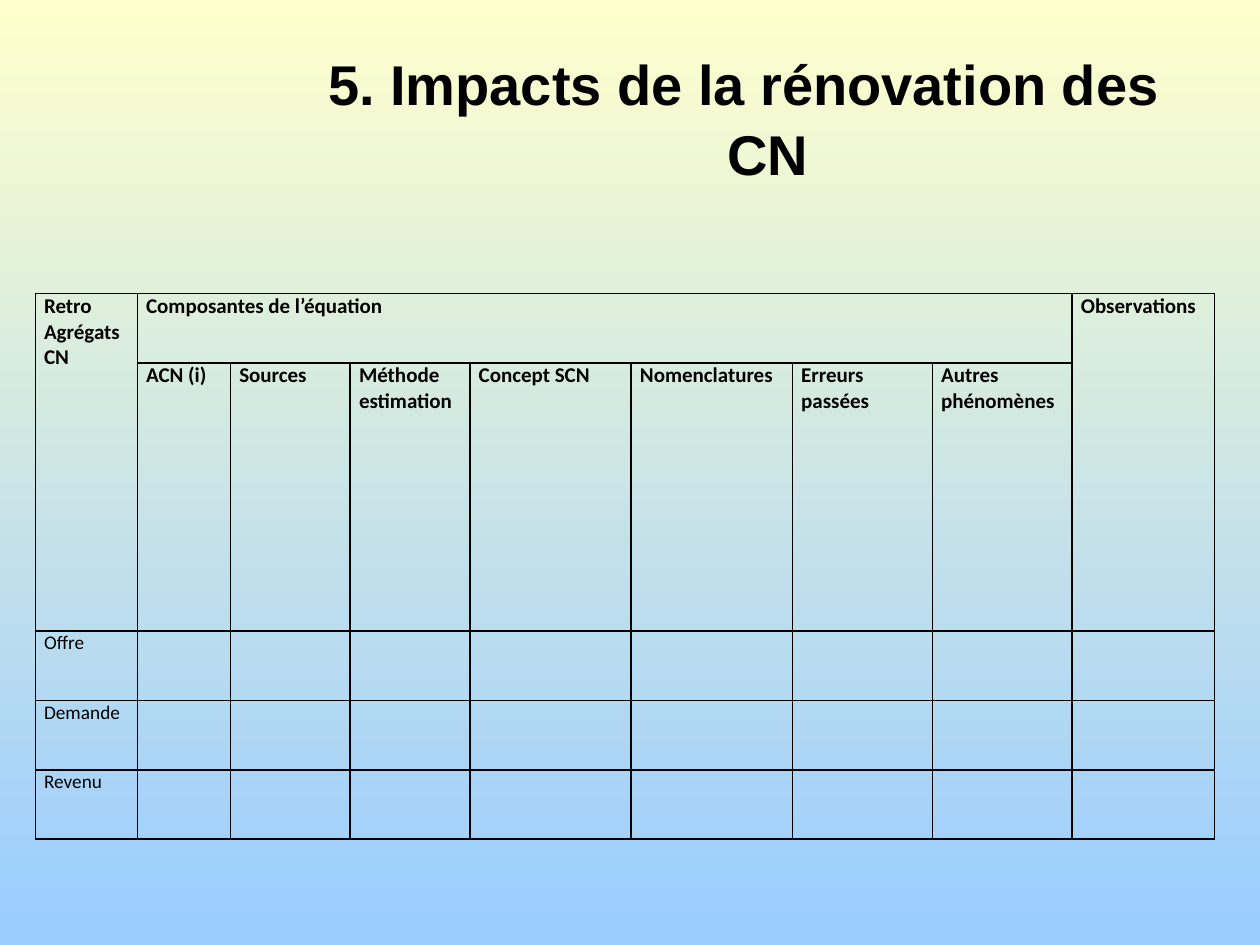
from lxml import etree
from pptx import Presentation
from pptx.dml.color import RGBColor
from pptx.enum.text import MSO_ANCHOR, MSO_AUTO_SIZE, PP_ALIGN
from pptx.oxml.ns import qn
from pptx.util import Inches, Pt

CENTER = PP_ALIGN.CENTER
JUSTIFY = PP_ALIGN.JUSTIFY
TOP = MSO_ANCHOR.TOP
NO_AUTOFIT = MSO_AUTO_SIZE.NONE

COLORS = {"text": "000000", "border": "000000", "sky_top": "FFFFCC", "sky_bottom": "99CCFF"}
COLUMN_WIDTHS = [0.81, 0.74, 0.95, 0.95, 1.28, 1.28, 1.11, 1.11, 1.13]
ROW_HEIGHTS = [0.55, 2.13, 0.55, 0.55, 0.55]
COMPONENTS = [
    "ACN (i)", "Sources", "Méthode estimation", "Concept SCN",
    "Nomenclatures", "Erreurs passées", "Autres phénomènes",
]
AGGREGATES = ["Offre", "Demande", "Revenu"]


def rgb(name):
    return RGBColor.from_string(COLORS[name])


def paint_background(slide):
    fill = slide.background.fill
    fill.gradient()
    fill.gradient_angle = 270
    for stop, position, name in zip(fill.gradient_stops, (0, 1), ("sky_top", "sky_bottom")):
        stop.position = position
        stop.color.rgb = rgb(name)


def add_run(paragraph, text, font_name, size, bold):
    run = paragraph.add_run()
    run.text = text
    run.font.name = font_name
    run.font.size = Pt(size)
    run.font.bold = bold
    run.font.color.rgb = rgb("text")


def write_title(slide, text):
    title = slide.shapes.title
    title.left, title.top = Inches(2.4), Inches(0.3)
    title.width, title.height = Inches(7.01), Inches(1.4)
    frame = title.text_frame
    frame.word_wrap = True
    frame.auto_size = NO_AUTOFIT
    frame.vertical_anchor = TOP
    frame.margin_top = Inches(0.07)
    paragraph = frame.paragraphs[0]
    paragraph.alignment = CENTER
    paragraph.line_spacing = 1.04
    paragraph.space_before = Pt(0)
    properties = paragraph._p.get_or_add_pPr()
    properties.set("marL", str(Inches(0.38)))
    properties.set("indent", str(Inches(-0.38)))
    add_run(paragraph, text, "Arial", 32, True)


def add_borders(cell):
    properties = cell._tc.get_or_add_tcPr()
    for position, side in enumerate(("a:lnL", "a:lnR", "a:lnT", "a:lnB")):
        line = etree.Element(qn(side), w=str(Pt(1)))
        fill = etree.SubElement(line, qn("a:solidFill"))
        etree.SubElement(fill, qn("a:srgbClr"), val=COLORS["border"])
        properties.insert(position, line)


def write_cell(cell, text, size, bold):
    cell.margin_left = cell.margin_right = Inches(0.07)
    cell.margin_top = cell.margin_bottom = 0
    cell.vertical_anchor = TOP
    paragraph = cell.text_frame.paragraphs[0]
    paragraph.alignment = JUSTIFY
    add_run(paragraph, text, "Calibri", size, bold)


def add_impact_table(slide):
    rows, columns = len(ROW_HEIGHTS), len(COLUMN_WIDTHS)
    table = slide.shapes.add_table(
        rows, columns, Inches(0.28), Inches(2.33),
        Inches(sum(COLUMN_WIDTHS)), Inches(sum(ROW_HEIGHTS)),
    ).table
    table.first_row = False
    table.horz_banding = False
    for column, width in zip(table.columns, COLUMN_WIDTHS):
        column.width = Inches(width)
    for row, height in zip(table.rows, ROW_HEIGHTS):
        row.height = Inches(height)
    for cell in table.iter_cells():
        cell.fill.background()
        add_borders(cell)

    last = columns - 1
    table.cell(0, 0).merge(table.cell(1, 0))
    table.cell(0, 1).merge(table.cell(0, last - 1))
    table.cell(0, last).merge(table.cell(1, last))

    headers = {0: "Retro Agrégats CN", 1: "Composantes de l’équation", last: "Observations"}
    for column, text in headers.items():
        write_cell(table.cell(0, column), text, 12, True)
    for column, text in enumerate(COMPONENTS, start=1):
        write_cell(table.cell(1, column), text, 12, True)
    for row, text in enumerate(AGGREGATES, start=2):
        write_cell(table.cell(row, 0), text, 11, False)


def main():
    presentation = Presentation()
    presentation.slide_width = Inches(10)
    presentation.slide_height = Inches(7.5)
    slide = presentation.slides.add_slide(presentation.slide_layouts[5])
    paint_background(slide)
    add_impact_table(slide)
    write_title(slide, "5. Impacts de la rénovation des CN")
    presentation.save("out.pptx")


if __name__ == "__main__":
    main()
